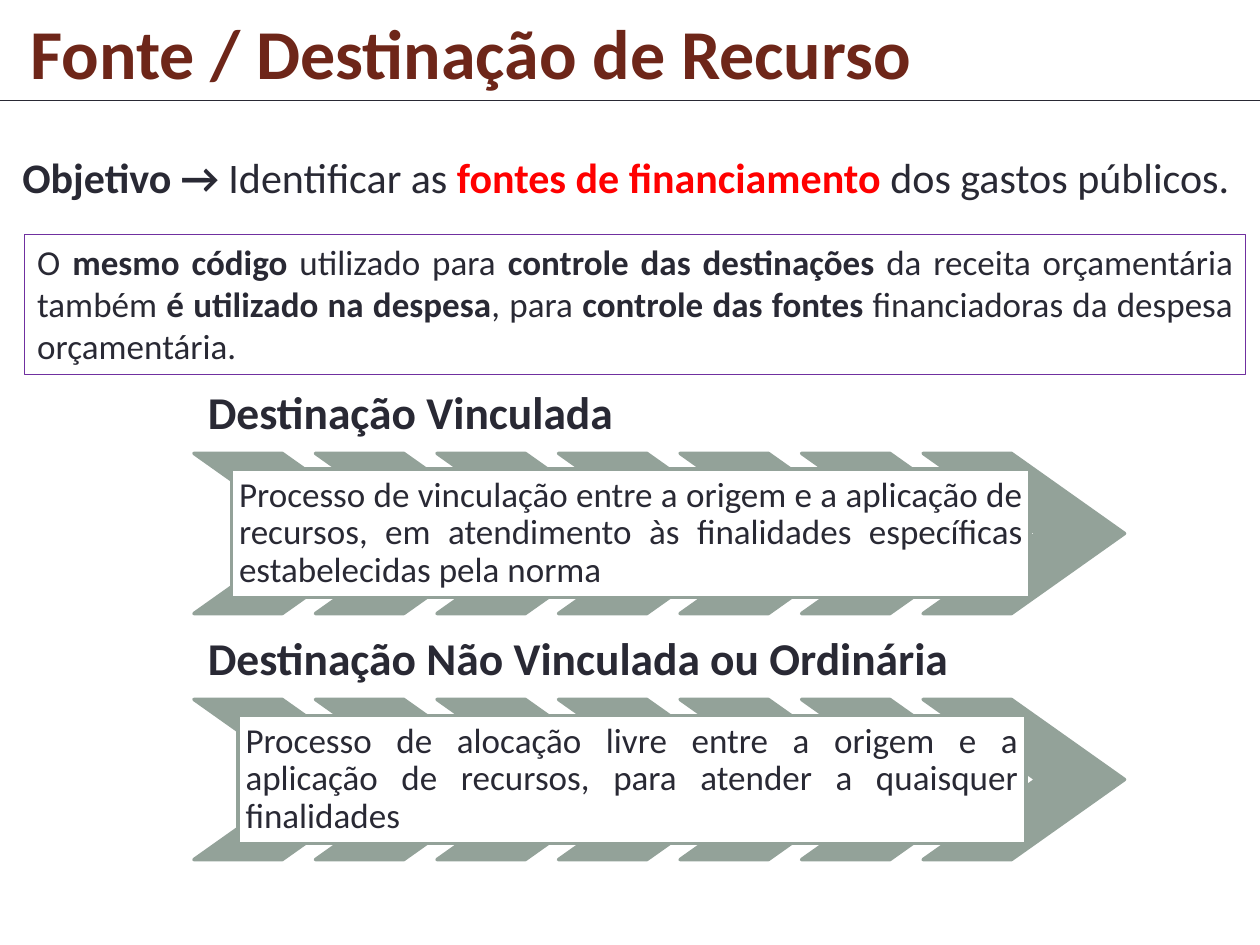
from lxml.etree import SubElement
from pptx import Presentation
from pptx.dml.color import RGBColor
from pptx.enum.shapes import MSO_CONNECTOR as Link, MSO_SHAPE as Form
from pptx.enum.text import MSO_ANCHOR as Anchor, PP_ALIGN as Align
from pptx.oxml.ns import qn
from pptx.util import Cm, Pt

INK = RGBColor(0x29, 0x29, 0x34)
BROWN = RGBColor(0x6E, 0x26, 0x19)
RED = RGBColor(0xFF, 0x00, 0x00)
PURPLE = RGBColor(0x70, 0x30, 0xA0)
SAGE = RGBColor(0x93, 0xA2, 0x99)
WHITE = RGBColor(0xFF, 0xFF, 0xFF)
FONT = "Calibri"


def write(shape, runs, size, align=Align.JUSTIFY, anchor=Anchor.TOP, inset=None, space=None):
    frame = shape.text_frame
    frame.word_wrap = True
    frame.vertical_anchor = anchor
    if inset is not None:
        frame.margin_left = frame.margin_right = Cm(inset)
        frame.margin_top = frame.margin_bottom = Cm(inset)
    para = frame.paragraphs[0]
    para.alignment = align
    if space:
        para.line_spacing = space
    for text, bold, color in runs:
        run = para.add_run()
        run.text = text
        font = run.font
        font.name, font.size, font.bold = FONT, Pt(size), bold
        font.color.rgb = color


def add_text(slide, box, runs, size, **style):
    shape = slide.shapes.add_textbox(*map(Cm, box))
    write(shape, runs, size, **style)


def add_form(slide, form, box, fill, line, width):
    shape = slide.shapes.add_shape(form, *map(Cm, box))
    shape.shadow.inherit = False
    if fill is None:
        shape.fill.background()
    else:
        shape.fill.solid()
        shape.fill.fore_color.rgb = fill
    shape.line.color.rgb = line
    shape.line.width = Pt(width)
    return shape


def add_rule(slide, top, width):
    rule = slide.shapes.add_connector(Link.STRAIGHT, 0, Cm(top), Cm(width), Cm(top))
    rule.line.color.rgb = INK
    rule.line.width = Pt(0.75)
    SubElement(rule._element.spPr, qn("a:effectLst"))


def add_band(slide, top, head, body, left, width):
    add_text(slide, (3.91, top, 17.4, 1.57), [(head, True, INK)], 26,
             align=Align.LEFT, anchor=Anchor.BOTTOM, inset=0.28, space=0.9)
    for i in range(7):
        box = (3.91 + i * 2.45, top + 1.57, 4.06, 3.23)
        arrow = add_form(slide, Form.CHEVRON, box, SAGE, SAGE, 2)
        arrow.adjustments[0] = 0.706
    panel = add_form(slide, Form.RECTANGLE, (left, top + 1.89, width, 2.59), WHITE, SAGE, 2)
    write(panel, [(body, False, INK)], 20, anchor=Anchor.MIDDLE, inset=0.15, space=0.9)


def main():
    deck = Presentation()
    deck.slide_width, deck.slide_height = Cm(25.4), Cm(19.05)
    slide = deck.slides.add_slide(deck.slide_layouts[6])

    add_text(slide, (0.2, 2.92, 25.1, 1.27), [
        ("Objetivo → ", True, INK),
        ("Identificar as ", False, INK),
        ("fontes de financiamento ", True, RED),
        ("dos gastos públicos.", False, INK),
    ], 24)

    note = add_form(slide, Form.RECTANGLE, (0.5, 4.73, 24.61, 2.82), None, PURPLE, 0.75)
    write(note, [
        ("O ", False, INK),
        ("mesmo código", True, INK),
        (" utilizado para ", False, INK),
        ("controle das destinações", True, INK),
        (" da receita orçamentária também ", False, INK),
        ("é utilizado na despesa", True, INK),
        (", para ", False, INK),
        ("controle das fontes", True, INK),
        (" financiadoras da despesa orçamentária.", False, INK),
    ], 20)

    add_band(slide, 7.57, "Destinação Vinculada",
             "Processo de vinculação entre a origem e a aplicação de recursos, "
             "em atendimento às finalidades específicas estabelecidas pela norma",
             4.67, 16.1)
    add_band(slide, 12.53, "Destinação Não Vinculada ou Ordinária",
             "Processo de alocação livre entre a origem e a aplicação de recursos, "
             "para atender a quaisquer finalidades",
             4.8, 15.88)

    add_text(slide, (0.3, -0.08, 18.39, 2.24),
             [("Fonte / Destinação de Recurso", True, BROWN)], 40,
             align=Align.CENTER, anchor=Anchor.MIDDLE)
    add_rule(slide, 2.03, 25.4)
    deck.save("out.pptx")


if __name__ == "__main__":
    main()
